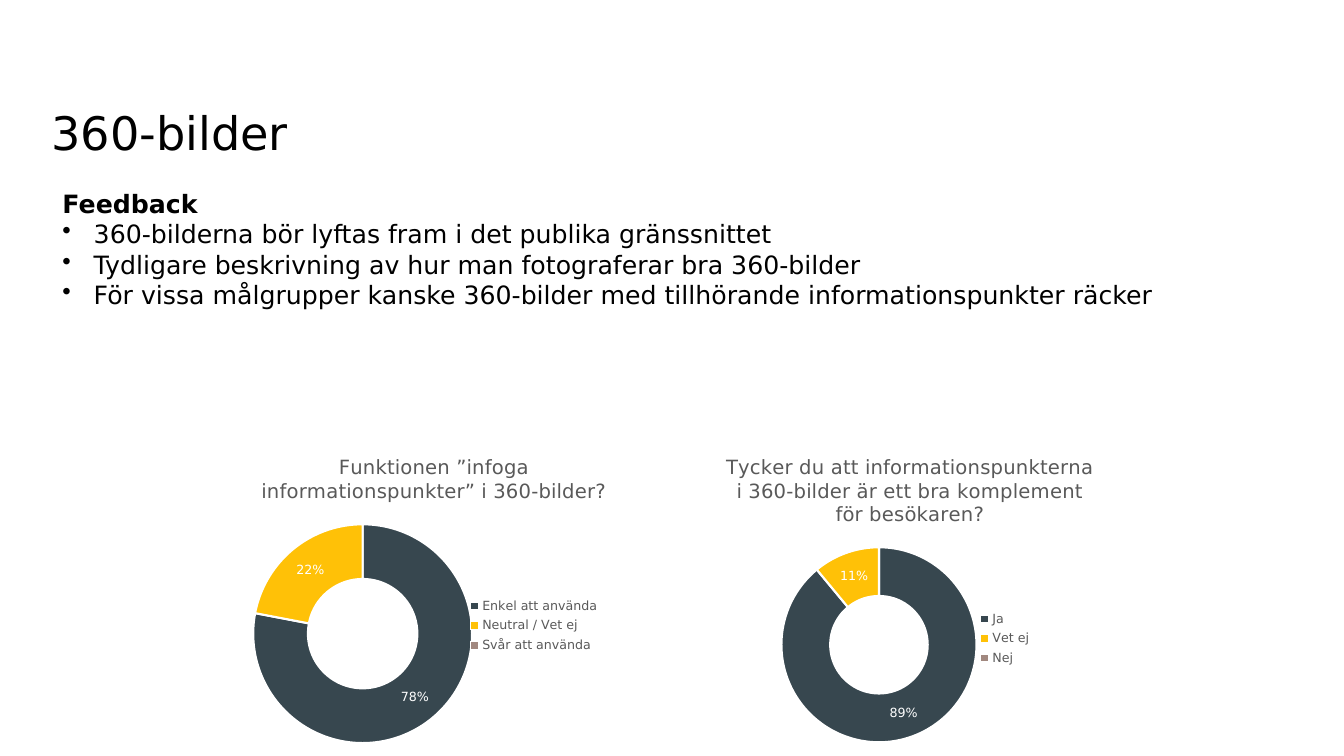
from dataclasses import dataclass

from lxml import etree
from pptx import Presentation, util as u
from pptx.chart import data as chart_data
from pptx.dml.color import RGBColor
from pptx.enum import chart as chart_kinds, text
from pptx.oxml import parse_xml
from pptx.oxml.ns import nsdecls, qn


@dataclass(frozen=True)
class Theme:
    font: str = "DejaVu Sans"
    ink: str = "000000"
    muted: str = "595959"
    paper: str = "FFFFFF"
    slices: tuple = ("37474F", "FFC107", "A1887F")
    title_size: int = 33
    body_size: int = 18
    chart_title_size: int = 14
    small_size: int = 9


THEME = Theme()
WIDTH, HEIGHT = 13.33, 7.5
CHART_WIDTH, CHART_HEIGHT, CHART_TOP = 4.72, 3.15, 4.35

FEEDBACK = (
    "360-bilderna bör lyftas fram i det publika gränssnittet",
    "Tydligare beskrivning av hur man fotograferar bra 360-bilder",
    "För vissa målgrupper kanske 360-bilder med tillhörande informationspunkter räcker",
)

QUESTIONS = (
    {
        "title": "Funktionen ”infoga informationspunkter” i 360-bilder?",
        "answers": ("Enkel att använda", "Neutral / Vet ej", "Svår att använda"),
        "values": (78, 22, 0),
        "ring": (0.12, 0.27, 0.46, 0.69),
        "legend": (0.57, 0.49, 0.28, 0.2),
    },
    {
        "title": "Tycker du att informationspunkterna i 360-bilder är ett bra komplement för besökaren?",
        "answers": ("Ja", "Vet ej", "Nej"),
        "values": (89, 11, 0),
        "ring": (0.23, 0.34, 0.41, 0.62),
        "legend": (0.64, 0.53, 0.12, 0.2),
    },
)


def style_font(font, size, color, bold=False):
    font.name = THEME.font
    font.size = u.Pt(size)
    font.bold = bold
    font.color.rgb = RGBColor.from_string(color)


def add_run(paragraph, wording, size, color, bold=False):
    run = paragraph.add_run()
    run.text = wording
    style_font(run.font, size, color, bold)


def add_text_frame(slide, box, anchor):
    frame = slide.shapes.add_textbox(*map(u.Inches, box)).text_frame
    frame.word_wrap = True
    frame.vertical_anchor = anchor
    frame.margin_left = frame.margin_top = frame.margin_right = frame.margin_bottom = 0
    return frame


def add_title(slide, box):
    frame = add_text_frame(slide, box, text.MSO_ANCHOR.BOTTOM)
    add_run(frame.paragraphs[0], "360-bilder", THEME.title_size, THEME.ink)


def add_feedback(slide, box):
    frame = add_text_frame(slide, box, text.MSO_ANCHOR.TOP)
    add_run(frame.paragraphs[0], "Feedback", THEME.body_size, THEME.ink, True)
    indent = u.Inches(0.31)
    for point in FEEDBACK:
        paragraph = frame.add_paragraph()
        properties = paragraph._p.get_or_add_pPr()
        properties.set("marL", str(indent))
        properties.set("indent", str(-indent))
        etree.SubElement(properties, qn("a:buChar")).set("char", "•")
        add_run(paragraph, point, THEME.body_size, THEME.ink)


def make_layout(shares, inner=False):
    target = '<c:layoutTarget val="inner"/>' if inner else ""
    modes = '<c:xMode val="edge"/><c:yMode val="edge"/>'
    lengths = "".join(f'<c:{name} val="{share}"/>' for name, share in zip("xywh", shares))
    return parse_xml(
        f'<c:layout {nsdecls("c")}><c:manualLayout>{target}{modes}{lengths}'
        "</c:manualLayout></c:layout>"
    )


def place_legend(chart, shares):
    chart.has_legend = True
    legend = chart.legend
    legend.position = chart_kinds.XL_LEGEND_POSITION.RIGHT
    legend.include_in_layout = False
    style_font(legend.font, THEME.small_size, THEME.muted)
    element = legend._element
    for layout in element.findall(qn("c:layout")):
        element.remove(layout)
    element.find(qn("c:legendPos")).addnext(make_layout(shares))


def place_ring(chart, shares):
    area = chart._chartSpace.chart.plotArea
    for layout in area.findall(qn("c:layout")):
        area.remove(layout)
    area.insert(0, make_layout(shares, inner=True))


def style_slices(plot, values):
    plot.vary_by_categories = True
    plot.has_data_labels = True
    labels = plot.data_labels
    labels.show_percentage = True
    labels.show_value = False
    labels.number_format = "0%"
    labels.number_format_is_linked = False
    style_font(labels.font, THEME.small_size, THEME.paper)
    series = plot.series[0]
    for index, (value, color) in enumerate(zip(values, THEME.slices)):
        shape_format = series.points[index].format
        shape_format.fill.solid()
        shape_format.fill.fore_color.rgb = RGBColor.from_string(color)
        shape_format.line.color.rgb = RGBColor.from_string(THEME.paper)
        shape_format.line.width = u.Pt(1.5)
        if value == 0:
            hidden = parse_xml(
                f'<c:dLbl {nsdecls("c")}><c:idx val="{index}"/><c:delete val="1"/></c:dLbl>'
            )
            series_labels = series.data_labels
            series_labels.show_percentage = True
            series_labels.show_value = False
            style_font(series_labels.font, THEME.small_size, THEME.paper)
            series_labels._element.insert(0, hidden)


def add_question(slide, box, question):
    answers = chart_data.CategoryChartData()
    answers.categories = question["answers"]
    answers.add_series("Series 1", question["values"])
    kind = chart_kinds.XL_CHART_TYPE.DOUGHNUT
    chart = slide.shapes.add_chart(kind, *map(u.Inches, box), answers).chart
    style_font(chart.font, 10, THEME.ink)
    chart.has_title = True
    paragraph = chart.chart_title.text_frame.paragraphs[0]
    add_run(paragraph, question["title"], THEME.chart_title_size, THEME.muted)
    chart.chart_title.include_in_layout = False
    place_legend(chart, question["legend"])
    place_ring(chart, question["ring"])
    style_slices(chart.plots[0], question["values"])


def main():
    presentation = Presentation()
    presentation.slide_width = u.Inches(WIDTH)
    presentation.slide_height = u.Inches(HEIGHT)
    slide = presentation.slides.add_slide(presentation.slide_layouts[6])
    add_title(slide, (0.51, 0.43, 9.45, 1.15))
    add_feedback(slide, (0.62, 1.87, 11.44, 1.51))
    first_left = WIDTH / 2 - CHART_WIDTH
    for column, question in enumerate(QUESTIONS):
        left = first_left + column * CHART_WIDTH
        add_question(slide, (left, CHART_TOP, CHART_WIDTH, CHART_HEIGHT), question)
    presentation.save("out.pptx")


if __name__ == "__main__":
    main()
